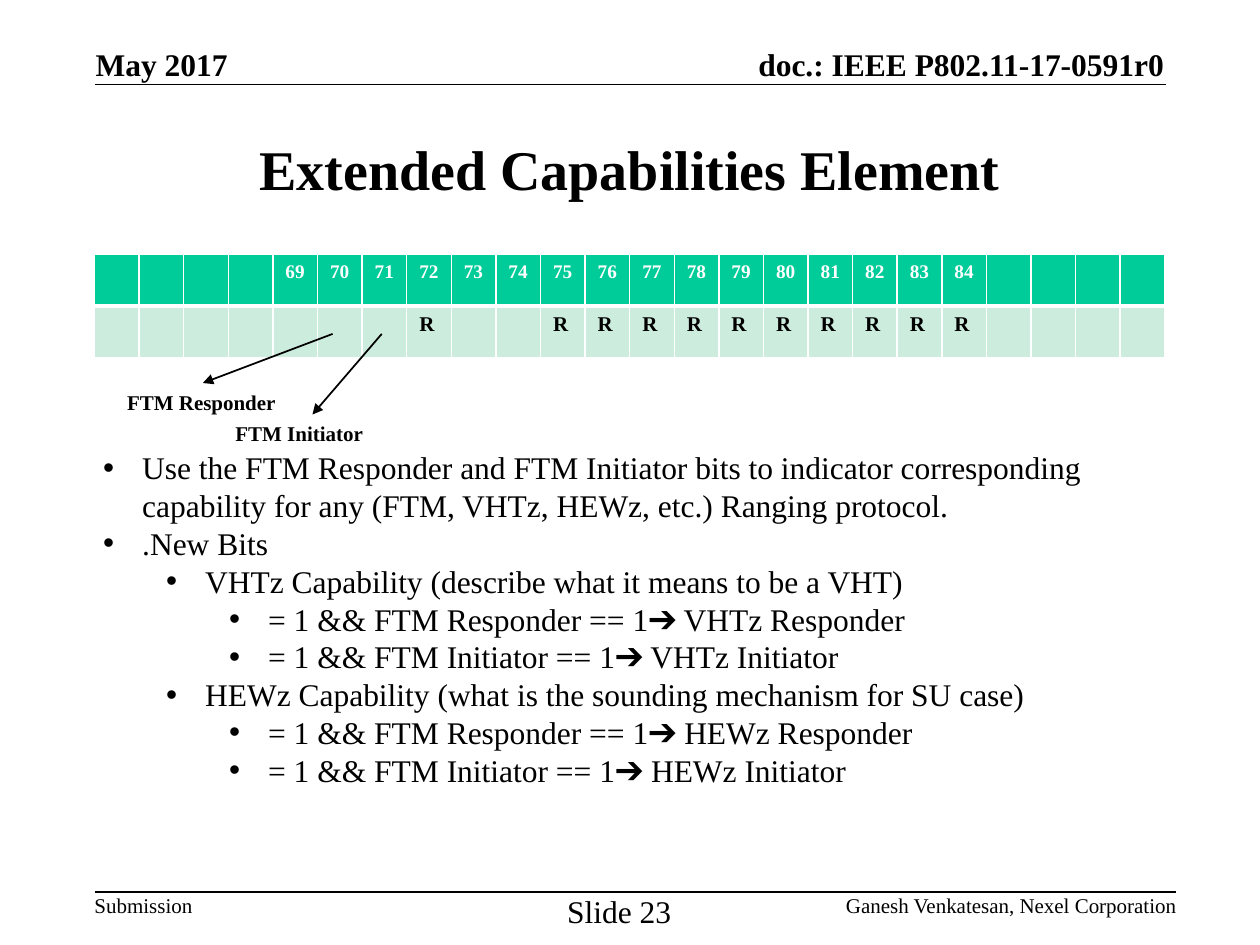
from pptx import Presentation
from pptx.dml.color import RGBColor
from pptx.enum.shapes import MSO_CONNECTOR as CONN
from pptx.enum.text import MSO_ANCHOR as ANCHOR, PP_ALIGN as ALIGN
from pptx.oxml import parse_xml
from pptx.oxml.ns import nsdecls
from pptx.util import Inches, Pt

FONT = "Times New Roman"


def style(p, size, bold=False, color="000000"):
    for r in p.runs:
        r.font.name = FONT
        r.font.size = Pt(size)
        r.font.bold = bold
        r.font.color.rgb = RGBColor.from_string(color)


def add_text(text, box, size, bold=False, align=ALIGN.LEFT, anchor=ANCHOR.TOP, inset=0):
    sp = s.shapes.add_textbox(*[Inches(v) for v in box])
    tf = sp.text_frame
    tf.word_wrap = True
    tf.vertical_anchor = anchor
    tf.margin_left = tf.margin_right = Inches(inset)
    tf.margin_top = tf.margin_bottom = Inches(inset / 2)
    tf.text = text
    for p in tf.paragraphs:
        p.alignment = align
        style(p, size, bold)
    return tf


prs = Presentation()
prs.slide_width, prs.slide_height = Inches(10), Inches(7.5)
s = prs.slides.add_slide(prs.slide_layouts[6])

add_text("May 2017", (0.76, 0.36, 2, 0.3), 18, True, anchor=ANCHOR.BOTTOM)
add_text("doc.: IEEE P802.11-17-0591r0", (5.5, 0.36, 3.74, 0.3), 18, True, ALIGN.RIGHT, ANCHOR.BOTTOM)
add_text("Extended Capabilities Element", (0.75, 0.75, 8.5, 1.17), 32, True, ALIGN.CENTER, ANCHOR.MIDDLE, 0.1)
add_text("Submission", (0.75, 7.08, 1, 0.2), 12)
add_text("Slide 23", (4.4, 7.08, 1.03, 0.3), 18, align=ALIGN.CENTER)
add_text("Ganesh Venkatesan, Nexel Corporation", (6.34, 7.08, 3, 0.2), 12, align=ALIGN.RIGHT)

cols, first_bit, last_bit = 24, 69, 84
reserved = {72, *range(75, 85)}
table = s.shapes.add_table(2, cols, Inches(0.75), Inches(2.02), Inches(8.5), Inches(0.82)).table
for col in table.columns:
    col.width = Inches(8.5 / cols)
for row in range(2):
    for col in range(cols):
        bit = first_bit + col - 4
        cell = table.cell(row, col)
        cell.margin_right = Inches(0.05)
        for side in "LRTB":
            width = Pt(3 if side == "BT"[row] else 1)
            cell._tc.get_or_add_tcPr().append(parse_xml(
                f'<a:ln{side} {nsdecls("a")} w="{width}"><a:solidFill>'
                f'<a:srgbClr val="FFFFFF"/></a:solidFill></a:ln{side}>'))
        cell.fill.solid()
        cell.fill.fore_color.rgb = RGBColor.from_string(("00CC99", "CCECDE")[row])
        if row == 0 and first_bit <= bit <= last_bit:
            cell.text_frame.text = str(bit)
            style(cell.text_frame.paragraphs[0], 11, True, "FFFFFF")
        elif row == 1 and bit in reserved:
            cell.text_frame.text = "R"
            style(cell.text_frame.paragraphs[0], 12, True)

add_text("FTM Responder", (0.91, 3.04, 1.42, 0.3), 12, True, inset=0.1)
add_text("FTM Initiator", (1.77, 3.29, 1.42, 0.3), 12, True, inset=0.1)

lines = [
    (0.75, 0.67, 9.25, 0.67, False),
    (0.75, 7.08, 9.33, 7.08, False),
    (2.64, 2.65, 1.61, 3.04, True),
    (3.03, 2.65, 2.48, 3.29, True),
]
for *ends, arrow in lines:
    line = s.shapes.add_connector(CONN.STRAIGHT, *[Inches(v) for v in ends])
    line.line.color.rgb = RGBColor.from_string("000000")
    line.line.width = Pt(1)
    if arrow:
        line.line._get_or_add_ln().append(parse_xml(f'<a:tailEnd {nsdecls("a")} type="triangle"/>'))
    line._element.spPr.append(parse_xml(f'<a:effectLst {nsdecls("a")}/>'))

bullets = [
    (0, "Use the FTM Responder and FTM Initiator bits to indicator corresponding "
        "capability for any (FTM, VHTz, HEWz, etc.) Ranging protocol."),
    (0, ".New Bits"),
    (1, "VHTz Capability (describe what it means to be a VHT)"),
    (2, "= 1 && FTM Responder == 1➔ VHTz Responder"),
    (2, "= 1 && FTM Initiator == 1➔ VHTz Initiator"),
    (1, "HEWz Capability (what is the sounding mechanism for SU case)"),
    (2, "= 1 && FTM Responder == 1➔ HEWz Responder"),
    (2, "= 1 && FTM Initiator == 1➔ HEWz Initiator"),
]
tf = add_text("\n".join(text for _, text in bullets), (0.72, 3.51, 8.85, 2.83), 18, inset=0.1)
for p, (level, _) in zip(tf.paragraphs, bullets):
    p.level = level
    pPr = p._p.get_or_add_pPr()
    pPr.set("marL", str(Inches(0.31 + 0.5 * level)))
    pPr.set("indent", str(Inches(-0.31)))
    pPr.append(parse_xml(f'<a:buFont {nsdecls("a")} typeface="Arial"/>'))
    pPr.append(parse_xml(f'<a:buChar {nsdecls("a")} char="•"/>'))

prs.save("out.pptx")
